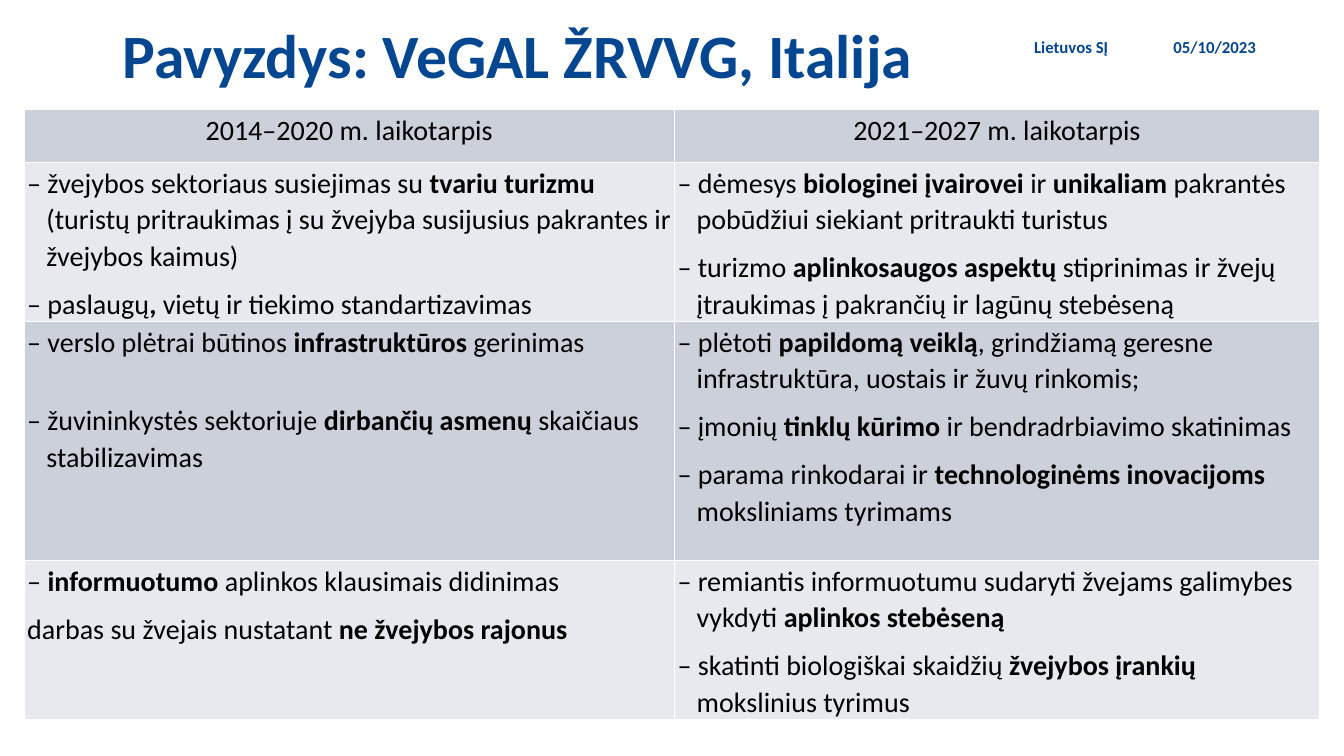
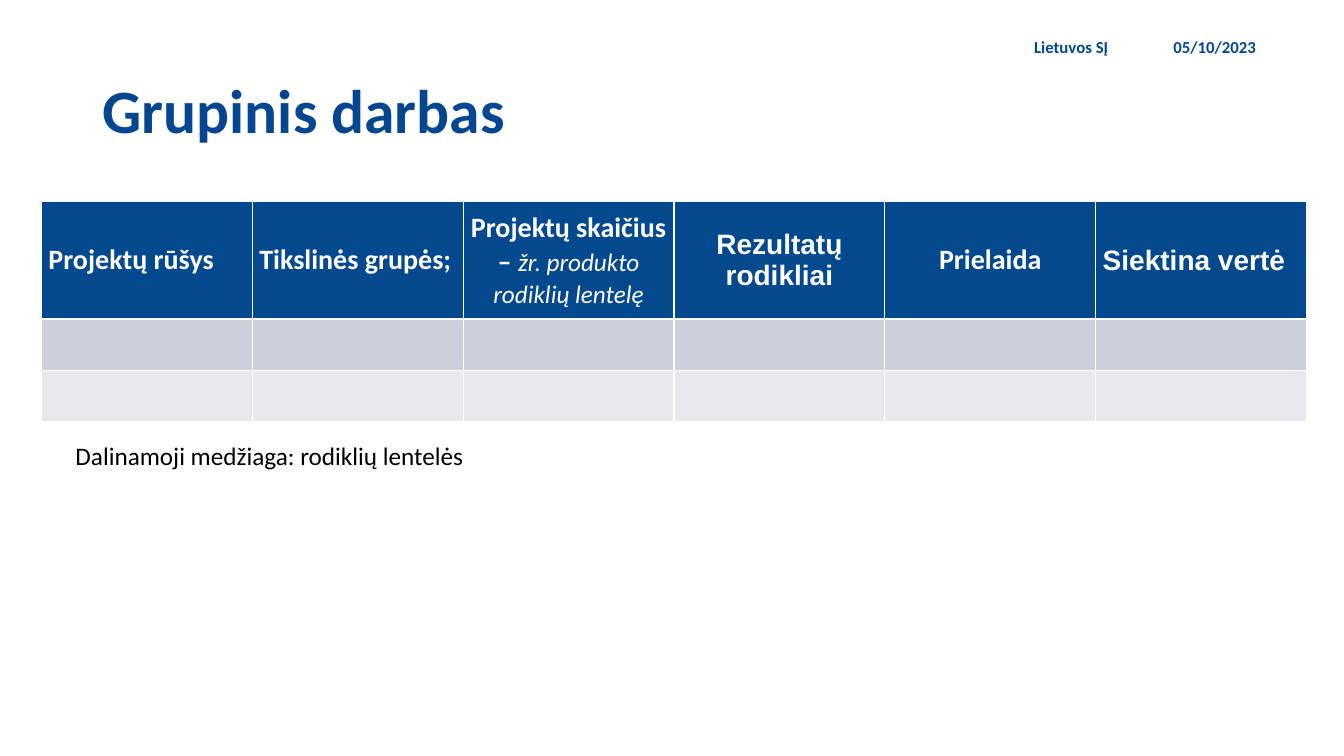
from lxml import etree
from pptx import Presentation
from pptx.dml.color import RGBColor
from pptx.enum.text import MSO_ANCHOR as ANCHOR, PP_ALIGN as ALIGN
from pptx.oxml.ns import qn
from pptx.util import Inches, Pt

COLORS = {"title": "054690", "head": "04498E", "band": "CCD0DB",
          "light": "E7E9EE", "text": "000000", "white": "FFFFFF"}
FONT = "Calibri"
TITLE_SIZE, META_SIZE, BODY_SIZE, NOTE_SIZE = 44, 12, 20, 18
HANGING = Inches(0.19)

prs = Presentation()
prs.slide_width, prs.slide_height = Inches(13.33), Inches(7.5)


def to_emu(box):
    """Turn left, top, width, height in percent of the slide into EMU."""
    sides = (prs.slide_width, prs.slide_height) * 2
    return [round(side * share / 100) for side, share in zip(sides, box)]


def style(p, size, color, bold=False, align=ALIGN.LEFT, font=FONT):
    p.alignment = align
    p.font.name, p.font.size, p.font.bold = font, Pt(size), bold
    p.font.color.rgb = RGBColor.from_string(COLORS[color])


def add_text(s, box, text, size, color, bold=False, align=ALIGN.LEFT,
             anchor=ANCHOR.MIDDLE, wrap=True):
    tf = s.shapes.add_textbox(*to_emu(box)).text_frame
    tf.word_wrap, tf.vertical_anchor = wrap, anchor
    p = tf.paragraphs[0]
    p.text = text
    style(p, size, color, bold, align)
    return p


def new_slide(title, title_box):
    """Add a slide with its title and the event line at the top right."""
    s = prs.slides.add_slide(prs.slide_layouts[6])
    p = add_text(s, title_box, title, TITLE_SIZE, "title", True)
    p.line_spacing = 0.9
    add_text(s, (61.14, 4.53, 22.06, 3.2), "Lietuvos SĮ", META_SIZE, "title",
             True, ALIGN.RIGHT)
    add_text(s, (86.57, 4.53, 9.9, 3.2), "05/10/2023", META_SIZE, "title", True)
    return s


def format_cell(cell, fill, inset_x, inset_y):
    cell.margin_left = cell.margin_right = Inches(inset_x)
    cell.margin_top = cell.margin_bottom = Inches(inset_y)
    tc_pr = cell._tc.get_or_add_tcPr()
    for tag in ("a:lnL", "a:lnR", "a:lnT", "a:lnB"):
        line = etree.SubElement(tc_pr, qn(tag), w=str(Pt(1)))
        solid = etree.SubElement(line, qn("a:solidFill"))
        etree.SubElement(solid, qn("a:srgbClr"), val=COLORS["white"])
    cell.fill.solid()
    cell.fill.fore_color.rgb = RGBColor.from_string(COLORS[fill])


def add_grid(s, box, col_shares, row_shares, fills, inset_x, inset_y):
    """Add a table whose columns and rows share the box, one fill per row."""
    left, top, width, height = to_emu(box)
    table = s.shapes.add_table(len(row_shares), len(col_shares),
                               left, top, width, height).table
    for col, share in zip(table.columns, col_shares):
        col.width = round(width * share / sum(col_shares))
    for row, share, fill in zip(table.rows, row_shares, fills):
        row.height = round(height * share / sum(row_shares))
        for cell in row.cells:
            format_cell(cell, fill, inset_x, inset_y)
    return table


def add_marked_runs(p, text):
    """Add runs to p; parts between asterisks are bold."""
    for i, part in enumerate(text.split("*")):
        if part:
            r = p.add_run()
            r.text = part
            if i % 2:
                r.font.bold = True


def fill_comparison_cell(cell, items, is_head, gap):
    tf = cell.text_frame
    for i, item in enumerate(items):
        p = tf.add_paragraph() if i else tf.paragraphs[0]
        if not is_head:
            p_pr = p._p.get_or_add_pPr()
            p_pr.set("marL", str(HANGING))
            p_pr.set("indent", str(-HANGING))
        add_marked_runs(p, item)
        style(p, BODY_SIZE, "text", align=ALIGN.CENTER if is_head else ALIGN.LEFT)
        p.line_spacing, p.space_after = 1.07, Pt(8)
        if i and gap:
            p.space_before = Pt(gap)


def comparison_table(s, box, rows, wide_gaps):
    table = add_grid(s, box, (6.45, 6.4), (0.52, 1.55, 2.37, 1.57),
                     ("band", "light") * 2, 0.03, 0.02)
    for r, row in enumerate(rows):
        for c, items in enumerate(row):
            fill_comparison_cell(table.cell(r, c), items, r == 0,
                                 wide_gaps.get((r, c), 0))


def worksheet_table(s, box, heads):
    table = add_grid(s, box, [1] * len(heads), (1.17, 0.51, 0.51),
                     ("head", "band", "light"), 0.07, 0)
    for cell, (text, detail, align, font) in zip(table.rows[0].cells, heads):
        cell.vertical_anchor = ANCHOR.MIDDLE
        p = cell.text_frame.paragraphs[0]
        p.add_run().text = text
        style(p, BODY_SIZE, "white", True, align, font)
        if detail:
            r = p.add_run()
            r.text = detail
            r.font.size, r.font.bold, r.font.italic = Pt(NOTE_SIZE), False, True


PERIODS = [
    (["2014–2020 m. laikotarpis"], ["2021–2027 m. laikotarpis"]),
    (["– žvejybos sektoriaus susiejimas su *tvariu turizmu *(turistų pritraukimas "
      "į su žvejyba susijusius pakrantes ir žvejybos kaimus)",
      "– paslaugų*, *vietų ir tiekimo standartizavimas"],
     ["– dėmesys *biologinei įvairovei *ir *unikaliam *pakrantės pobūdžiui "
      "siekiant pritraukti turistus",
      "– turizmo *aplinkosaugos aspektų *stiprinimas ir žvejų įtraukimas į "
      "pakrančių ir lagūnų stebėseną"]),
    (["– verslo plėtrai būtinos *infrastruktūros *gerinimas",
      "– žuvininkystės sektoriuje *dirbančių asmenų *skaičiaus stabilizavimas"],
     ["– plėtoti *papildomą veiklą*, grindžiamą geresne infrastruktūra, uostais "
      "ir žuvų rinkomis;",
      "– įmonių *tinklų kūrimo *ir bendradrbiavimo skatinimas",
      "– parama rinkodarai ir *technologinėms inovacijoms *moksliniams tyrimams"]),
    (["– *informuotumo* aplinkos klausimais didinimas",
      "darbas su žvejais nustatant *ne žvejybos rajonus*"],
     ["– remiantis informuotumu sudaryti žvejams galimybes vykdyti "
      "*aplinkos stebėseną*",
      "– skatinti biologiškai skaidžių *žvejybos įrankių *mokslinius tyrimus"]),
]
HEADS = [
    ("Projektų rūšys", "", ALIGN.LEFT, FONT),
    ("Tikslinės grupės;", "", ALIGN.LEFT, FONT),
    ("Projektų skaičius – ", "žr. produkto rodiklių lentelę", ALIGN.CENTER, FONT),
    ("Rezultatų rodikliai", "", ALIGN.CENTER, "Arial"),
    ("Prielaida", "", ALIGN.CENTER, FONT),
    ("Siektina vertė", "", ALIGN.LEFT, "Arial"),
]


def main():
    s = new_slide("Pavyzdys: VeGAL ŽRVVG, Italija", (8.4, 2.13, 86.27, 11.33))
    comparison_table(s, (1.8, 14.53, 96.4, 80.13), PERIODS, {(2, 0): 22})

    s = new_slide("Grupinis darbas", (6.9, 5.33, 86.27, 19.33))
    worksheet_table(s, (3.08, 26.67, 94.15, 29.07), HEADS)
    add_text(s, (4.88, 57.6, 30.68, 5.33), "Dalinamoji medžiaga: rodiklių lentelės",
             NOTE_SIZE, "text", anchor=ANCHOR.TOP, wrap=False)
    prs.save("out.pptx")


if __name__ == "__main__":
    main()
